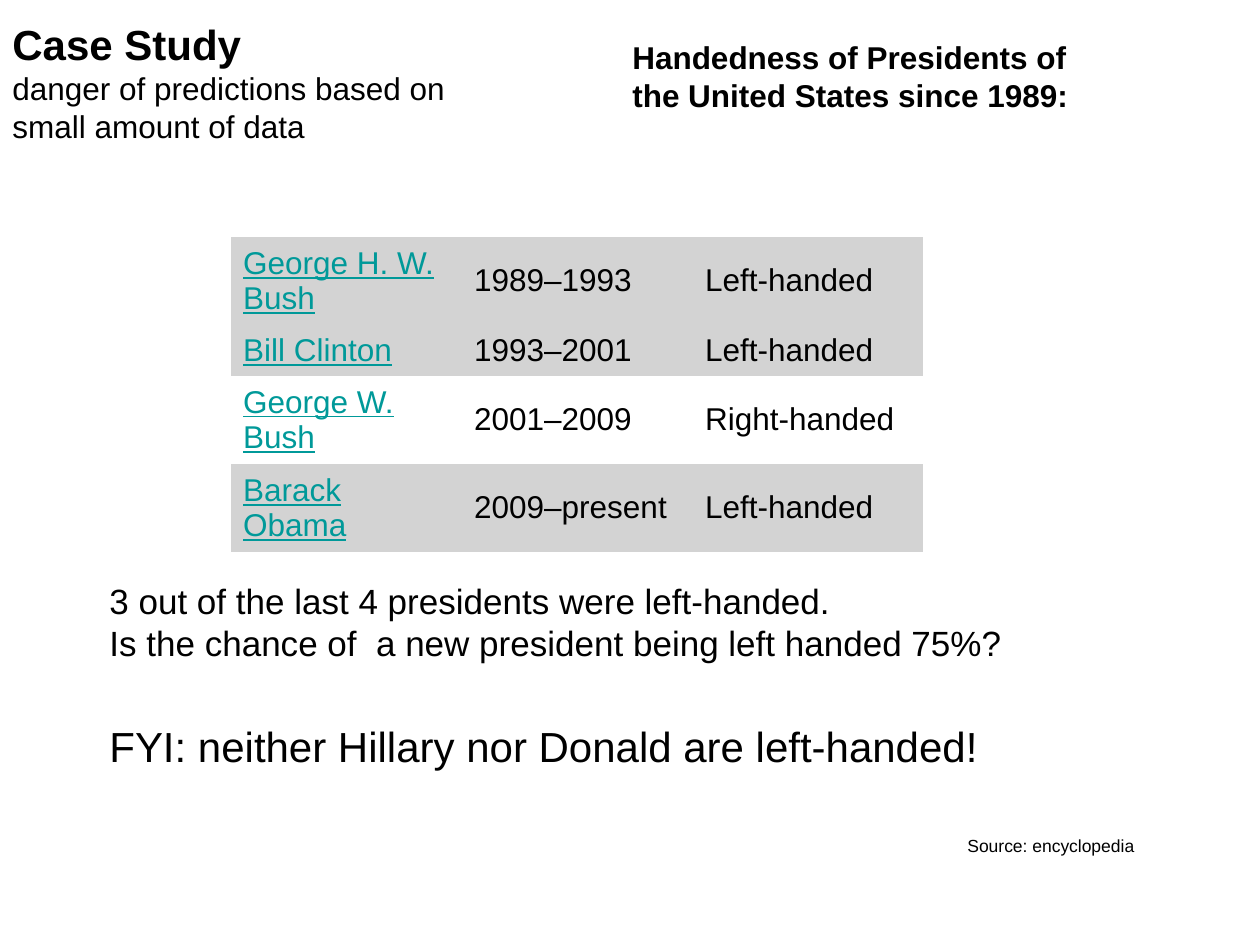
from lxml.etree import SubElement as Sub
from pptx import Presentation
from pptx.dml.color import RGBColor as Rgb
from pptx.enum.text import MSO_ANCHOR as Anchor
from pptx.oxml.ns import qn
from pptx.util import Inches as In, Pt

WIDE, HIGH = 10, 7.5
INK, TEAL, GREY = "000000", "009999", "D3D3D3"
LEFT = 0.77  # shared edge of the remarks
COL = 5.5 / 3
ROWS = [
    ("George H. W. Bush", "1989–1993", "Left-handed"),
    ("Bill Clinton", "1993–2001", "Left-handed"),
    ("George W. Bush", "2001–2009", "Right-handed"),
    ("Barack Obama", "2009–present", "Left-handed"),
]


def tint(hue):
    return Rgb.from_string(hue)


def add_run(para, text, size, bold=False, hue=INK, line=False):
    run = para.add_run()
    run.text = text
    font = run.font
    font.name, font.size, font.bold = "Arial", Pt(size), bold
    font.underline = line
    font.color.rgb = tint(hue)


def add_text(slide, x, y, w, h, lines):
    """Each line is a paragraph: (text, size, bold)."""
    frame = slide.shapes.add_textbox(In(x), In(y), In(w), In(h)).text_frame
    frame.word_wrap = True
    for i, line in enumerate(lines):
        para = frame.add_paragraph() if i else frame.paragraphs[0]
        add_run(para, *line)
    return frame


def add_title(slide):
    frame = add_text(slide, 0, 0.15, 4.08, 1, [("Case Study", 24, True)])
    frame.margin_top = frame.margin_bottom = 0
    frame.vertical_anchor = Anchor.MIDDLE
    para = frame.paragraphs[0]
    para.add_line_break()
    add_run(para, "danger of predictions based on small amount of data", 18)


def clear_edges(cell):
    """Hide all four borders; call before the fill is set."""
    props = cell._tc.get_or_add_tcPr()
    for side in "LRTB":
        Sub(Sub(props, qn(f"a:ln{side}"), w="0"), qn("a:noFill"))


def add_grid(slide):
    grid = slide.shapes.add_table(
        len(ROWS), 3, In(1.83), In(1.88), In(3 * COL), In(2.5)).table
    grid.first_row = grid.horz_banding = False
    for r, row in enumerate(ROWS):
        grid.rows[r].height = In(0.35 if r else 0.61)
        for c, text in enumerate(row):
            cell = grid.cell(r, c)
            cell.vertical_anchor = Anchor.MIDDLE
            clear_edges(cell)
            # Left-handed rows are shaded
            if row[-1] == "Left-handed":
                cell.fill.solid()
                cell.fill.fore_color.rgb = tint(GREY)
            else:
                cell.fill.background()
            name = c == 0
            add_run(cell.text_frame.paragraphs[0], text, 18,
                    hue=TEAL if name else INK, line=name)


def main():
    deck = Presentation()
    deck.slide_width, deck.slide_height = In(WIDE), In(HIGH)
    slide = deck.slides.add_slide(deck.slide_layouts[6])

    # Headings
    add_title(slide)
    add_text(slide, 4.92, 0.25, 3.92, 0.71, [
        ("Handedness of Presidents of the United States since 1989:", 18, True)])

    # Presidents
    add_grid(slide)

    # Remarks and source
    add_text(slide, LEFT, 4.55, 8.65, 0.77, [
        ("3 out of the last 4 presidents were left-handed.", 20),
        ("Is the chance of  a new president being left handed 75%?", 20)])
    add_text(slide, LEFT, 5.67, 7.57, 0.5, [
        ("FYI: neither Hillary nor Donald are left-handed!", 24)])
    add_text(slide, 7.58, 6.58, 1.83, 0.27, [("Source: encyclopedia", 10)])

    deck.save("out.pptx")


if __name__ == "__main__":
    main()
